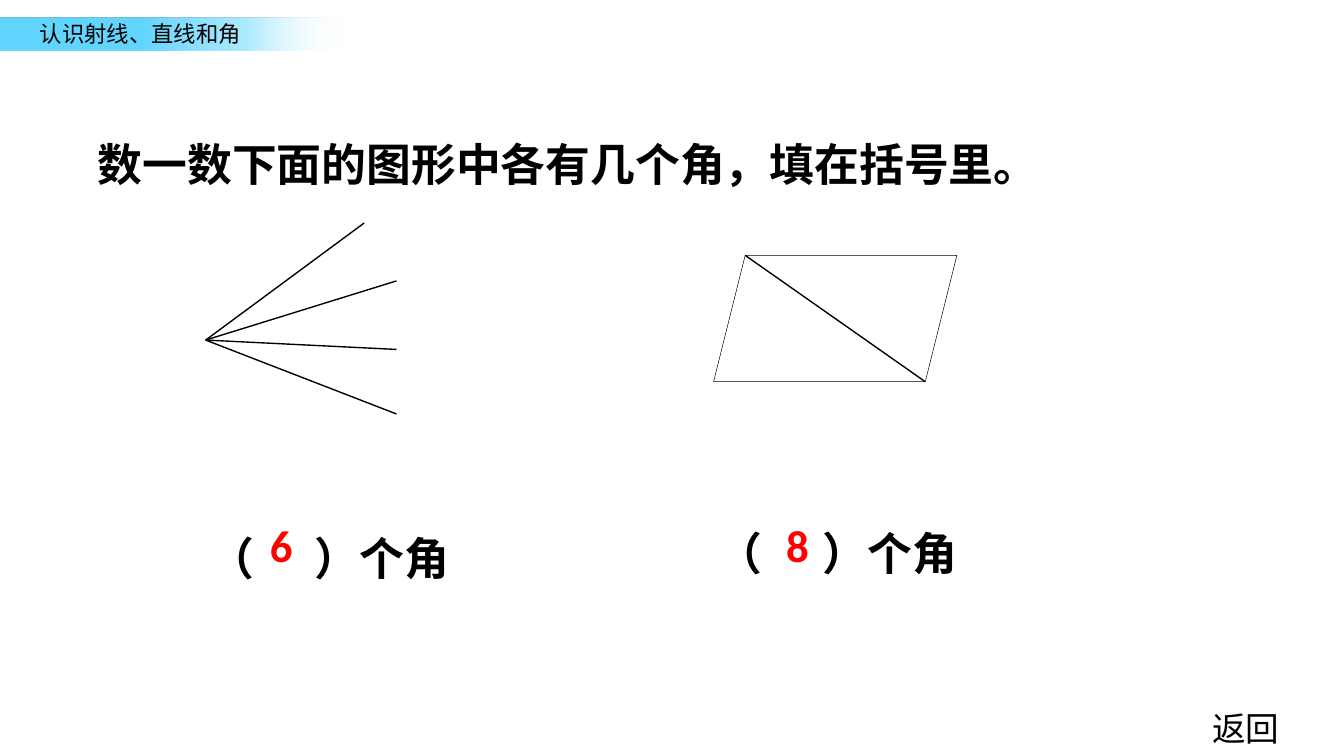
from lxml import etree
from pptx import Presentation
from pptx import util as u
from pptx.dml.color import RGBColor
from pptx.enum import shapes, text
from pptx.oxml.ns import qn

THEME = {
    "ink": "000000", "mark": "FF0000",
    "cjk": "Noto Sans CJK SC", "latin": "Calibri",
    "small": 12, "mid": 18, "big": 24,
    "thin": 0.25, "line": 0.75,
    # position %, colour, opacity %
    "fade": [(40, "63D6FF", 100), (70, "96E4FF", 76), (97, "FFFFFF", 0)],
}

# Content (lengths in points)
TOPIC = "认识射线、直线和角"
TASK = "数一数下面的图形中各有几个角，填在括号里。"
BACK = "返回"
BLANK = "（\t）个角"
GAP = 56.5  # where the closing bracket starts
# blank left, blank top, answer left, answer
COUNTS = [(105, 266.4, 137.5, "6"), (377.3, 263.5, 414, "8")]
APEX = (110.2, 182.2)
TIPS = [(195.1, 119.5), (212.4, 150.5), (212.4, 187.2), (212.4, 221.8)]
BOX = (382.3, 136.8, 130.3, 67.7)  # parallelogram

deck = Presentation()
deck.slide_width, deck.slide_height = u.Pt(720), u.Pt(405)
slide = deck.slides.add_slide(deck.slide_layouts[6])
parts = slide.shapes


def pts(*vals):
    return [u.Pt(v) for v in vals]


def write(words, box, size="big", font="cjk", color="ink", bold=False,
          space=None, wrap=True, tab=None):
    frame = parts.add_textbox(*pts(*box)).text_frame
    frame.word_wrap = wrap
    frame.auto_size = text.MSO_AUTO_SIZE.SHAPE_TO_FIT_TEXT
    para = frame.paragraphs[0]
    if space:
        para.line_spacing = space
    if tab:
        tabs = etree.SubElement(para._p.get_or_add_pPr(), qn("a:tabLst"))
        etree.SubElement(tabs, qn("a:tab"), pos=str(u.Pt(tab)), algn="l")
    run = para.add_run()
    run.text = words
    run.font.size = u.Pt(THEME[size])
    run.font.bold = bold
    run.font.color.rgb = RGBColor.from_string(THEME[color])
    run.font.name = THEME[font]
    east = etree.SubElement(run.font._element, qn("a:ea"))
    east.set("typeface", THEME["cjk"])


def ink(line, width):
    line.color.rgb = RGBColor.from_string(THEME["ink"])
    line.width = u.Pt(THEME[width])


def draw(start, end):
    line = parts.add_connector(shapes.MSO_CONNECTOR.STRAIGHT,
                               *pts(*start, *end))
    ink(line.line, "line")
    etree.SubElement(line._element.spPr, qn("a:effectLst"))


def shape(kind, box):
    item = parts.add_shape(kind, *pts(*box))
    item.shadow.inherit = False
    item.fill.background()
    return item


def fade(item):
    grad = etree.Element(qn("a:gradFill"), rotWithShape="1")
    stops = etree.SubElement(grad, qn("a:gsLst"))
    for pos, color, alpha in THEME["fade"]:
        stop = etree.SubElement(stops, qn("a:gs"), pos=str(pos * 1000))
        tone = etree.SubElement(stop, qn("a:srgbClr"), val=color)
        etree.SubElement(tone, qn("a:alpha"), val=str(alpha * 1000))
    etree.SubElement(grad, qn("a:lin"), ang="0", scaled="0")
    props = item._element.spPr
    props.replace(props.find(qn("a:noFill")), grad)


# Header band and back label
band = shape(shapes.MSO_SHAPE.RECTANGLE, (0, 9.5, 190, 17.5))
band.line.fill.background()
fade(band)
write(TOPIC, (14.2, 7.3, 153.4, 21.8), size="small")
write(BACK, (642.3, 375.6, 51, 29), size="mid", wrap=False)

# Task
write(TASK, (45.3, 55.4, 521.3, 44), bold=True, space=1.5)

# Rays from one point
for tip in TIPS:
    draw(APEX, tip)

# Parallelogram with its diagonal
ink(shape(shapes.MSO_SHAPE.PARALLELOGRAM, BOX).line, "thin")
left, top, wide, high = BOX
slant = high / 4
draw((left + slant, top), (left + wide - slant, top + high))

# Blanks and answers
for left, top, spot, count in COUNTS:
    write(BLANK, (left, top, 159, 51), font="latin", bold=True,
          space=1.5, tab=GAP)
    write(count, (spot, 273.6, 34, 36), font="latin", color="mark", bold=True)

deck.save("out.pptx")
